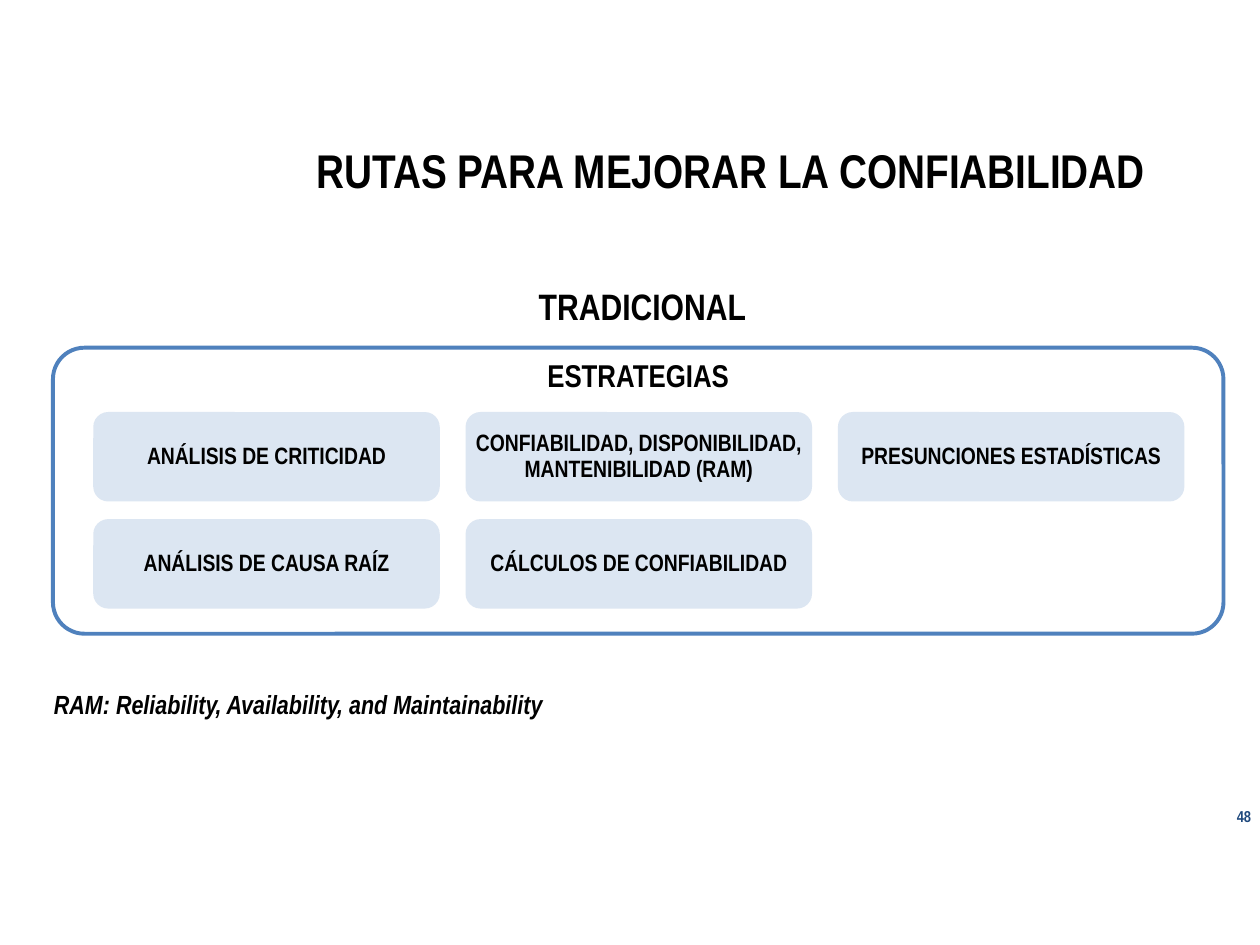
from pptx import Presentation
from pptx.dml.color import RGBColor
from pptx.enum.shapes import MSO_SHAPE
from pptx.enum.text import MSO_ANCHOR, PP_ALIGN
from pptx.util import Inches, Pt

COLORS = {
    "text": "000000",
    "number": "1F497D",
    "frame": "4F81BD",
    "card": "DCE6F2",
    "white": "FFFFFF",
}
FONT = "Arial Narrow"
STRATEGIES = [
    ["ANÁLISIS DE CRITICIDAD",
     "CONFIABILIDAD, DISPONIBILIDAD, MANTENIBILIDAD (RAM)",
     "PRESUNCIONES ESTADÍSTICAS"],
    ["ANÁLISIS DE CAUSA RAÍZ", "CÁLCULOS DE CONFIABILIDAD"],
]


def rgb(name):
    return RGBColor.from_string(COLORS[name])


def set_text(sp, text, size, color="text", align=PP_ALIGN.CENTER,
             anchor=MSO_ANCHOR.MIDDLE, italic=None, spacing=None,
             inset=(0.1, 0.05), wrap=True):
    tf = sp.text_frame
    tf.word_wrap = wrap
    tf.vertical_anchor = anchor
    tf.margin_left = tf.margin_right = Inches(inset[0])
    tf.margin_top = tf.margin_bottom = Inches(inset[1])
    p = tf.paragraphs[0]
    p.alignment = align
    if spacing:
        p.line_spacing = spacing
    r = p.add_run()
    r.text = text
    r.font.name = FONT
    r.font.size = Pt(size)
    r.font.bold = True
    r.font.italic = italic
    r.font.color.rgb = rgb(color)


def add_label(s, box, text, size, **fmt):
    sp = s.shapes.add_textbox(*map(Inches, box))
    set_text(sp, text, size, **fmt)


def add_box(s, box, fill, line=None, radius=None):
    sp = s.shapes.add_shape(MSO_SHAPE.ROUNDED_RECTANGLE, *map(Inches, box))
    sp.shadow.inherit = False
    sp.fill.solid()
    sp.fill.fore_color.rgb = rgb(fill)
    if line:
        sp.line.color.rgb = rgb(line)
        sp.line.width = Pt(2.25)
    else:
        sp.line.fill.background()
    if radius is not None:
        sp.adjustments[0] = radius
    return sp


def add_strategies(s, box):
    """Framed panel with a heading and a grid of strategy cards."""
    left, top, _, _ = box
    card_w, card_h = 2.75, 0.71
    step_x, step_y = 2.955, 0.85
    tight = dict(spacing=0.9, inset=(0.03, 0.03))

    frame = add_box(s, box, "white", line="frame", radius=0.11)
    set_text(frame, "ESTRATEGIAS", 18, anchor=MSO_ANCHOR.TOP, wrap=False, **tight)
    for row, names in enumerate(STRATEGIES):
        for col, name in enumerate(names):
            card = add_box(s, (left + 0.32 + col * step_x,
                               top + 0.51 + row * step_y, card_w, card_h), "card")
            set_text(card, name, 13.5, **tight)


def main():
    prs = Presentation()
    prs.slide_width, prs.slide_height = Inches(10), Inches(7.5)
    s = prs.slides.add_slide(prs.slide_layouts[6])

    add_label(s, (2.07, 0.98, 7.46, 0.79),
              "RUTAS PARA MEJORAR LA CONFIABILIDAD", 27, spacing=0.9)
    add_label(s, (0.42, 2.18, 9.29, 0.5), " TRADICIONAL", 21)
    add_strategies(s, (0.42, 2.76, 9.29, 2.27))
    add_label(s, (0.33, 5.41, 6.32, 0.35),
              "RAM: Reliability, Availability, and Maintainability", 15,
              align=PP_ALIGN.LEFT, anchor=MSO_ANCHOR.TOP, italic=True)
    add_label(s, (8.25, 6.39, 1.75, 0.18), "48", 9, color="number",
              align=PP_ALIGN.RIGHT, inset=(0.07, 0.04))

    prs.save("out.pptx")


if __name__ == "__main__":
    main()
